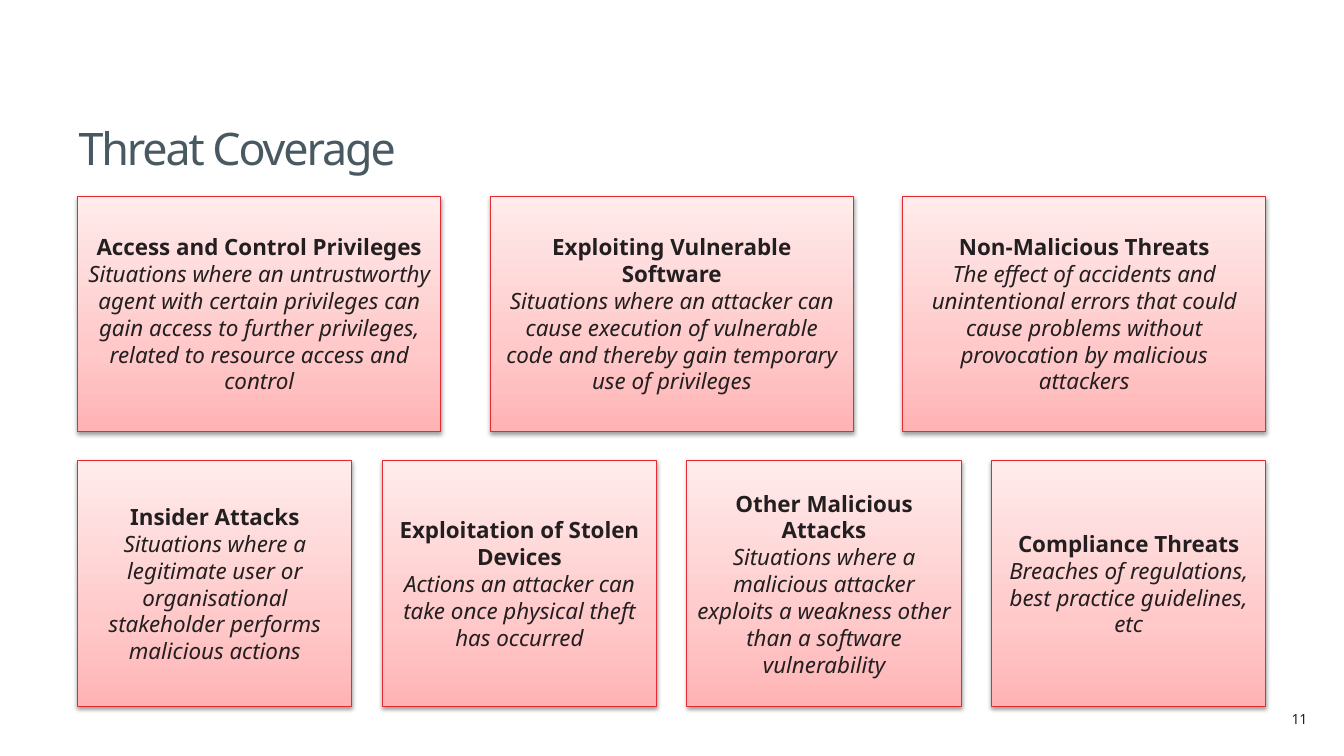
from copy import deepcopy
from dataclasses import dataclass

from lxml import etree
from pptx import Presentation
from pptx import util as u
from pptx.dml.color import RGBColor
from pptx.enum import shapes, text
from pptx.oxml.ns import qn


@dataclass(frozen=True)
class Theme:
    font: str = "Noto Sans"
    ink: str = "231F20"
    title_ink: str = "495961"
    border: str = "E62A32"
    shadow: str = "000000"
    gradient: tuple = ((0, "FFB3B4"), (0.35, "FFC9CA"), (1, "FFEBEB"))
    title_size: float = 32
    card_size: float = 16
    number_size: float = 10


class Deck:
    def __init__(self, theme):
        self.theme = theme
        self.prs = Presentation()
        self.prs.slide_width, self.prs.slide_height = u.Cm(33.87), u.Cm(19.05)
        self.s = self.prs.slides.add_slide(self.prs.slide_layouts[6])

    def set_text(self, p, words, size, color, align, bold=False, italic=False):
        p.alignment = align
        p.font.name = self.theme.font
        p.font.size = u.Pt(size)
        p.font.color.rgb = RGBColor.from_string(color)
        p.font.bold, p.font.italic = bold, italic
        r = p.add_run()
        r.text = words
        return r

    def label(self, box, words, size, color, align, anchor, spacing=0):
        tf = self.s.shapes.add_textbox(*map(u.Cm, box)).text_frame
        tf.word_wrap = True
        tf.vertical_anchor = anchor
        r = self.set_text(tf.paragraphs[0], words, size, color, align)
        if spacing:
            r.font._element.set("spc", str(spacing))

    def shade(self, sp):
        sp.fill.gradient()
        sp.fill.gradient_angle = 90
        stops = sp._element.spPr.find(".//" + qn("a:gsLst"))
        stops.insert(1, deepcopy(stops[0]))
        for stop, (position, color) in zip(sp.fill.gradient_stops, self.theme.gradient):
            stop.position = position
            stop.color.rgb = RGBColor.from_string(color)

    def drop_shadow(self, sp):
        sp.shadow.inherit = False
        effects = sp._element.spPr.find(qn("a:effectLst"))
        outer = etree.SubElement(effects, qn("a:outerShdw"), blurRad="40000",
                                 dist="20000", dir="5400000", rotWithShape="0")
        color = etree.SubElement(outer, qn("a:srgbClr"), val=self.theme.shadow)
        etree.SubElement(color, qn("a:alpha"), val="38000")

    def card(self, box, heading, detail):
        t = self.theme
        sp = self.s.shapes.add_shape(shapes.MSO_SHAPE.RECTANGLE, *map(u.Cm, box))
        self.shade(sp)
        sp.line.color.rgb = RGBColor.from_string(t.border)
        sp.line.width = u.Pt(0.75)
        self.drop_shadow(sp)
        tf = sp.text_frame
        tf.word_wrap = True
        tf.vertical_anchor = text.MSO_ANCHOR.MIDDLE
        center = text.PP_ALIGN.CENTER
        self.set_text(tf.paragraphs[0], heading, t.card_size, t.ink, center, bold=True)
        self.set_text(tf.add_paragraph(), detail, t.card_size, t.ink, center, italic=True)

    def card_row(self, top, width, height, cards, left=1.96, right=31.9):
        step = (right - left - width) / (len(cards) - 1)
        for i, (heading, detail) in enumerate(cards):
            self.card((left + i * step, top, width, height), heading, detail)


TOP_ROW = [
    ("Access and Control Privileges",
     "Situations where an untrustworthy agent with certain privileges can gain "
     "access to further privileges, related to resource access and control"),
    ("Exploiting Vulnerable Software",
     "Situations where an attacker can cause execution of vulnerable code and "
     "thereby gain temporary use of privileges"),
    ("Non-Malicious Threats",
     "The effect of accidents and unintentional errors that could cause problems "
     "without provocation by malicious attackers"),
]
BOTTOM_ROW = [
    ("Insider Attacks",
     "Situations where a legitimate user or organisational stakeholder performs "
     "malicious actions"),
    ("Exploitation of Stolen Devices",
     "Actions an attacker can take once physical theft has occurred"),
    ("Other Malicious Attacks",
     "Situations where a malicious attacker exploits a weakness other than a "
     "software vulnerability"),
    ("Compliance Threats",
     "Breaches of regulations, best practice guidelines, etc"),
]


def main():
    theme = Theme()
    deck = Deck(theme)
    deck.label((30.53, 17.78, 2.67, 0.69), "11", theme.number_size, theme.ink,
               text.PP_ALIGN.RIGHT, text.MSO_ANCHOR.TOP)
    deck.label((1.73, 1.93, 30.12, 2.59), "Threat Coverage", theme.title_size,
               theme.title_ink, text.PP_ALIGN.LEFT, text.MSO_ANCHOR.BOTTOM, spacing=-150)
    deck.card_row(4.95, 9.15, 5.92, TOP_ROW)
    deck.card_row(11.61, 6.91, 6.2, BOTTOM_ROW)
    deck.prs.save("out.pptx")


if __name__ == "__main__":
    main()
